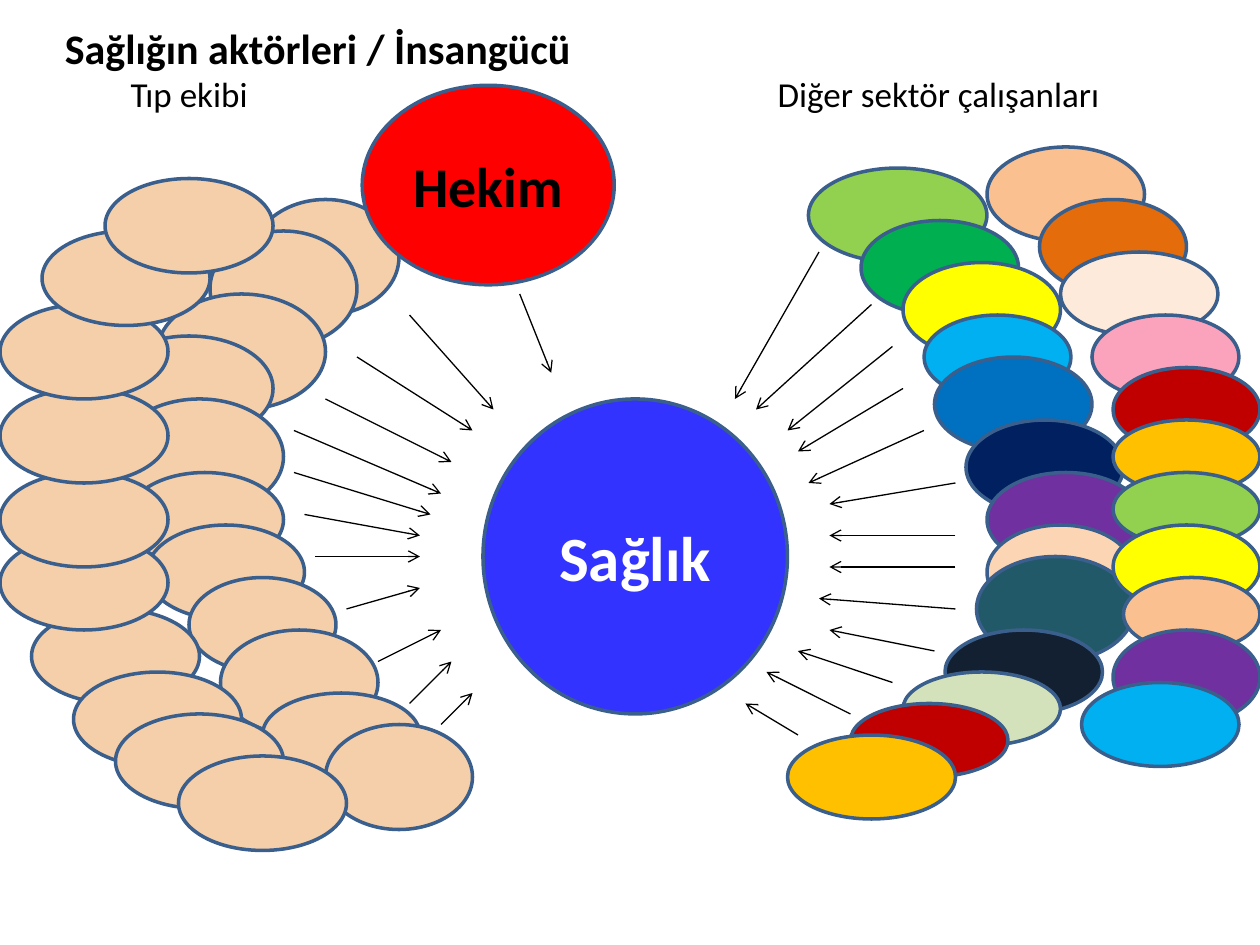
"""Build a slide of the people around health: medical team, physician and other sectors."""
from dataclasses import dataclass

from lxml.etree import SubElement
from pptx import Presentation
from pptx.dml.color import RGBColor
from pptx.enum.shapes import MSO_CONNECTOR, MSO_SHAPE
from pptx.enum.text import MSO_ANCHOR, PP_ALIGN
from pptx.oxml.ns import qn
from pptx.util import Pt

PX = 9525


@dataclass(frozen=True)
class Theme:
    font: str = "Calibri"
    black: str = "000000"
    white: str = "FFFFFF"
    outline: str = "3A5F8C"
    health: str = "3333FF"
    physician: str = "FF0000"
    team: str = "F4CFAA"
    title_size: int = 24
    subtitle_size: int = 20
    health_size: int = 36
    physician_size: int = 32


theme = Theme()


def add_text(paragraph, text, size, color, bold=True):
    run = paragraph.add_run()
    run.text = text
    run.font.name = theme.font
    run.font.size = Pt(size)
    run.font.bold = bold
    run.font.color.rgb = RGBColor.from_string(color)


def add_ellipse(left, top, width, height, fill):
    shape = slide.shapes.add_shape(
        MSO_SHAPE.OVAL, left * PX, top * PX, width * PX, height * PX)
    shape.shadow.inherit = False
    shape.fill.solid()
    shape.fill.fore_color.rgb = RGBColor.from_string(fill)
    shape.line.color.rgb = RGBColor.from_string(theme.outline)
    shape.line.width = Pt(2)
    return shape


presentation = Presentation()
presentation.slide_width = 960 * PX
presentation.slide_height = 720 * PX
slide = presentation.slides.add_slide(presentation.slide_layouts[6])

title = slide.shapes.add_textbox(40 * PX, 0, 848 * PX, 104 * PX)
title.text_frame.word_wrap = True
title.text_frame.vertical_anchor = MSO_ANCHOR.MIDDLE
paragraph = title.text_frame.paragraphs[0]
tab_list = SubElement(paragraph._p.get_or_add_pPr(), qn("a:tabLst"))
for position in (50, 543):
    SubElement(tab_list, qn("a:tab"), pos=str(position * PX), algn="l")
add_text(paragraph, "Sağlığın aktörleri / İnsangücü", theme.title_size, theme.black)
paragraph.add_line_break()
add_text(paragraph, "\tTıp ekibi\tDiğer sektör çalışanları",
         theme.subtitle_size, theme.black, bold=False)

team_inner = [
    (192, 152, 112, 88), (160, 176, 112, 88), (120, 224, 128, 88),
    (80, 256, 128, 80), (88, 304, 128, 88), (96, 360, 120, 72),
    (112, 400, 120, 72), (144, 440, 112, 72), (168, 480, 120, 80),
    (200, 528, 120, 64), (248, 552, 112, 80),
]
team_outer = [
    (24, 464), (56, 512), (88, 544), (136, 576), (0, 408),
    (0, 360), (0, 296), (0, 232), (32, 176), (80, 136),
]
other_sectors = [
    (616, 128, 136, 72, "92D050"), (656, 168, 120, 72, "00B050"),
    (688, 200, 120, 72, "FFFF00"), (704, 240, 112, 64, "00B0F0"),
    (712, 272, 120, 72, "0070C0"), (736, 320, 120, 72, "002060"),
    (752, 360, 120, 72, "7030A0"), (752, 400, 112, 72, "FCD5B5"),
    (744, 424, 120, 80, "215968"), (720, 480, 120, 64, "122031"),
    (688, 512, 120, 56, "D4E2BC"), (648, 536, 120, 56, "C00000"),
    (600, 560, 128, 64, "FFC000"), (752, 112, 120, 72, "FAC090"),
    (792, 152, 112, 72, "E46C0A"), (808, 192, 120, 64, "FDEADA"),
    (832, 240, 112, 64, "FBA3BC"), (848, 280, 112, 64, "C00000"),
    (848, 320, 112, 56, "FFC000"), (848, 360, 112, 56, "92D050"),
    (848, 400, 112, 64, "FFFF00"), (856, 440, 104, 56, "FAC090"),
    (848, 480, 112, 72, "7030A0"), (824, 520, 120, 64, "00B0F0"),
]

for box in team_inner:
    add_ellipse(*box, theme.team)
for left, top in team_outer:
    add_ellipse(left, top, 128, 72, theme.team)
for sector in other_sectors:
    add_ellipse(*sector)

labelled = [
    ((368, 304, 232, 240), theme.health, "Sağlık", theme.health_size, theme.white),
    ((276, 65, 192, 152), theme.physician, "Hekim", theme.physician_size, theme.black),
]
for box, fill, label, size, color in labelled:
    shape = add_ellipse(*box, fill)
    shape.text_frame.vertical_anchor = MSO_ANCHOR.MIDDLE
    paragraph = shape.text_frame.paragraphs[0]
    paragraph.alignment = PP_ALIGN.CENTER
    add_text(paragraph, label, size, color)

team_arrows = [
    (312, 240, 376, 312), (272, 272, 360, 328), (248, 304, 344, 352),
    (224, 328, 336, 376), (224, 360, 328, 392), (232, 392, 320, 408),
    (240, 424, 320, 424), (264, 464, 320, 448), (288, 504, 336, 480),
    (312, 536, 344, 504), (336, 552, 360, 528),
]
sector_arrows = [
    (624, 192, 560, 304), (664, 232, 576, 312), (680, 264, 600, 328),
    (688, 296, 608, 344), (704, 328, 616, 368), (728, 368, 632, 384),
    (728, 408, 632, 408), (728, 432, 632, 432), (728, 464, 624, 456),
    (712, 496, 632, 480), (680, 520, 608, 496), (648, 544, 584, 512),
    (608, 560, 568, 536),
]
physician_arrow = (396, 224, 420, 284)
for arrow in [*team_arrows, *sector_arrows, physician_arrow]:
    connector = slide.shapes.add_connector(
        MSO_CONNECTOR.STRAIGHT, *(value * PX for value in arrow))
    connector.line.color.rgb = RGBColor.from_string(theme.black)
    connector.line.width = Pt(0.75)
    SubElement(connector.line._get_or_add_ln(), qn("a:tailEnd"), type="arrow")
    SubElement(connector._element.spPr, qn("a:effectLst"))

presentation.save("out.pptx")
